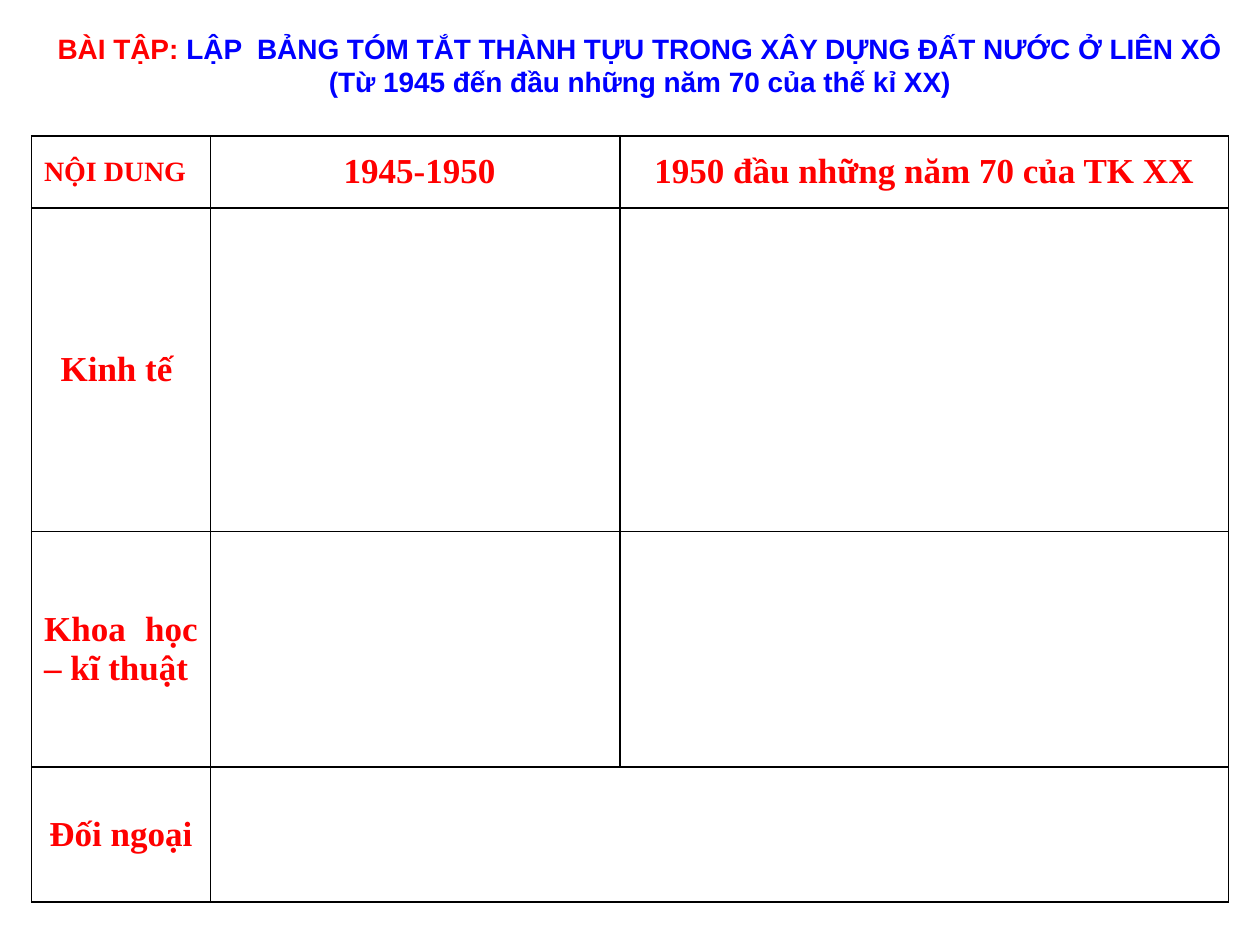
"""Builds an exercise slide with an empty summary table of Soviet achievements."""
import pptx
import pptx.util
import pptx.dml.color
import pptx.enum.text
import pptx.oxml
import pptx.oxml.ns

Pt = pptx.util.Pt
ALIGN = pptx.enum.text.PP_ALIGN

THEME = {
    "red": "FF0000", "blue": "0000FF", "line": "000000",
    "title_font": "Arial", "table_font": "Times New Roman",
    "small": 16, "large": 20, "border": 1,
}

TITLE = [
    [("BÀI TẬP: ", "red"),
     ("LẬP  BẢNG TÓM TẮT THÀNH TỰU TRONG XÂY DỰNG ĐẤT NƯỚC Ở LIÊN XÔ ", "blue")],
    [("(Từ 1945 đến đầu những năm 70 của thế kỉ XX)", "blue")],
]
TITLE_AREA = (23.76, 14.4, 684, 46)
TITLE_INDENT = 67

COLUMNS = [102.24, 234, 347.76]
ROWS = [41, 185, 134.6, 77]
TABLE_ORIGIN = (18, 77.8)
LABELS = {
    (0, 0): ("NỘI DUNG", {"size": THEME["small"], "align": ALIGN.LEFT}),
    (0, 1): (" 1945-1950", {}),
    (0, 2): ("1950 đầu những năm 70 của TK XX", {}),
    (1, 0): ("Kinh tế ", {}),
    (2, 0): ("Khoa học – kĩ thuật", {"align": ALIGN.JUSTIFY}),
    (3, 0): ("Đối ngoại", {"before": 0}),
}


def add_span(para, text, size=THEME["large"], font=THEME["table_font"], color="red",
             align=ALIGN.CENTER, before=0.2):
    para.alignment = align
    para.space_before = Pt(before * size)
    span = para.add_run()
    span.text = text
    span.font.name = font
    span.font.size = Pt(size)
    span.font.bold = True
    span.font.color.rgb = pptx.dml.color.RGBColor.from_string(THEME[color])


def add_borders(cell):
    properties = cell._tc.get_or_add_tcPr()
    for side in ("lnL", "lnR", "lnT", "lnB"):
        properties.append(pptx.oxml.parse_xml(
            f'<a:{side} {pptx.oxml.ns.nsdecls("a")} w="{Pt(THEME["border"])}">'
            f'<a:solidFill><a:srgbClr val="{THEME["line"]}"/></a:solidFill></a:{side}>'))


def add_title(page):
    box = page.shapes.add_textbox(*map(Pt, TITLE_AREA))
    frame = box.text_frame
    frame.word_wrap = True
    frame.auto_size = pptx.enum.text.MSO_AUTO_SIZE.SHAPE_TO_FIT_TEXT
    for number, spans in enumerate(TITLE):
        para = frame.add_paragraph() if number else frame.paragraphs[0]
        for text, color in spans:
            add_span(para, text, size=THEME["small"], font=THEME["title_font"],
                     color=color, before=0)
        properties = para._p.get_or_add_pPr()
        properties.set("marL", str(Pt(TITLE_INDENT)))
        properties.set("indent", str(-Pt(TITLE_INDENT)))


def add_summary(page):
    area = (*TABLE_ORIGIN, sum(COLUMNS), sum(ROWS))
    table = page.shapes.add_table(len(ROWS), len(COLUMNS), *map(Pt, area)).table
    table.first_row = table.horz_banding = False
    for column, width in zip(table.columns, COLUMNS):
        column.width = Pt(width)
    for row, height in zip(table.rows, ROWS):
        row.height = Pt(height)
    for cell in table.iter_cells():
        add_borders(cell)
        cell.fill.background()
        cell.vertical_anchor = pptx.enum.text.MSO_ANCHOR.MIDDLE
    for (row, column), (text, style) in LABELS.items():
        add_span(table.cell(row, column).text_frame.paragraphs[0], text, **style)
    last = len(ROWS) - 1
    label = table.cell(last, 0)
    label.margin_left = label.margin_right = Pt(5)
    label.margin_top = label.margin_bottom = Pt(0)
    table.cell(last, 1).merge(table.cell(last, 2))


def main():
    deck = pptx.Presentation()
    deck.slide_width, deck.slide_height = Pt(720), Pt(540)
    page = deck.slides.add_slide(deck.slide_layouts[6])
    add_summary(page)
    add_title(page)
    deck.save("out.pptx")


if __name__ == "__main__":
    main()
